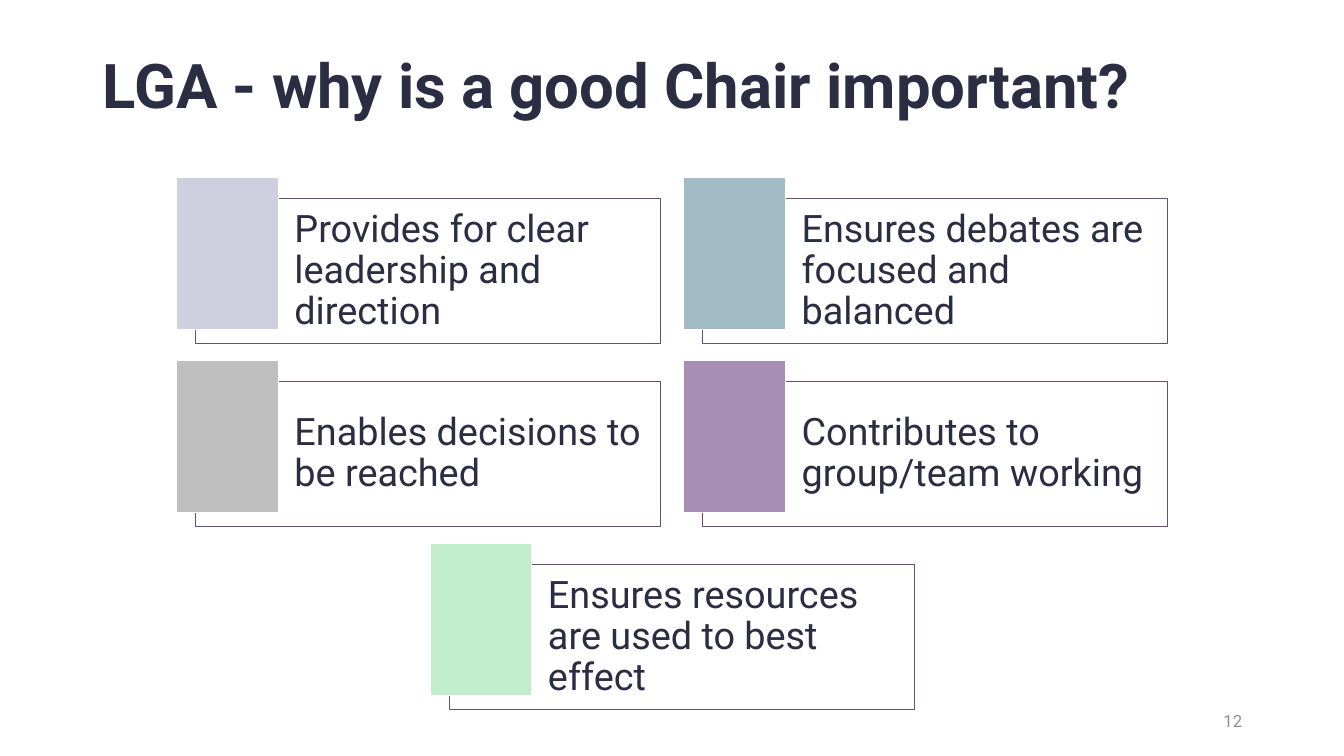
from pptx import Presentation
from pptx.dml.color import RGBColor as RGB
from pptx.enum.shapes import MSO_SHAPE as SHAPE
from pptx.enum.text import MSO_ANCHOR as ANCHOR, PP_ALIGN as ALIGN
from pptx.oxml.ns import qn
from pptx.util import Inches, Pt
from lxml import etree

# Content
TITLE = "LGA - why is a good Chair important?"
PAGE = "12"
REASONS = [
    ("Provides for clear leadership and direction", "CED0DF"),
    ("Ensures debates are focused and balanced", "A2BCC6"),
    ("Enables decisions to be reached", "BFBFBF"),
    ("Contributes to group/team working", "A88DB4"),
    ("Ensures resources are used to best effect", "C1EDCC"),
]

THEME = {
    "font": "Roboto", "ink": "2B2D42", "muted": "8F8F93",
    "paper": "FFFFFF", "frame": "694D75",
    "title": 44, "body": 27, "page": 12,
}

# Layout, in inches
COLUMNS = 2
LEFT, TOP = 1.94, 1.97
CARD_W, CARD_H = 4.61, 1.44
PITCH_X, PITCH_Y = 5.03, 1.815
TAB_W, TAB_H = 1.01, 1.51
TAB_DX, TAB_DY = -0.19, -0.21

prs = Presentation()
prs.slide_width, prs.slide_height = Inches(13.33), Inches(7.5)
s = prs.slides.add_slide(prs.slide_layouts[6])


def write(sp, text, size, color=THEME["ink"], bold=False, align=ALIGN.LEFT,
          spacing=1.0, insets=(0.1, 0.05, 0.1, 0.05)):
    tf = sp.text_frame
    tf.word_wrap = True
    tf.vertical_anchor = ANCHOR.MIDDLE
    (tf.margin_left, tf.margin_top,
     tf.margin_right, tf.margin_bottom) = map(Inches, insets)
    p = tf.paragraphs[0]
    p.alignment, p.line_spacing = align, spacing
    r = p.add_run()
    r.text = text
    r.font.name, r.font.size, r.font.bold = THEME["font"], Pt(size), bold
    r.font.color.rgb = RGB.from_string(color)


def add_rect(x, y, w, h, fill, line, line_width):
    sp = s.shapes.add_shape(SHAPE.RECTANGLE, *map(Inches, (x, y, w, h)))
    sp.shadow.inherit = False
    sp.fill.solid()
    sp.fill.fore_color.rgb = RGB.from_string(fill)
    sp.line.color.rgb = RGB.from_string(line)
    sp.line.width = Pt(line_width)
    return sp


def add_text(x, y, w, h, text, size, **style):
    sp = s.shapes.add_textbox(*map(Inches, (x, y, w, h)))
    write(sp, text, size, **style)


def set_opacity(sp, percent):
    color = sp.fill._xPr.find(qn("a:solidFill"))[0]
    etree.SubElement(color, qn("a:alpha")).set("val", str(percent * 1000))


# Title
add_text(0.92, 0.15, 11.5, 1.45, TITLE, THEME["title"], bold=True, spacing=0.9)

# Reason cards, with a short last row centred
for i, (reason, tab_color) in enumerate(REASONS):
    row, col = divmod(i, COLUMNS)
    in_row = min(COLUMNS, len(REASONS) - row * COLUMNS)
    x = LEFT + (col + (COLUMNS - in_row) / 2) * PITCH_X
    y = TOP + row * PITCH_Y
    card = add_rect(x, y, CARD_W, CARD_H, THEME["paper"], THEME["frame"], 0.5)
    set_opacity(card, 40)
    write(card, reason, THEME["body"], spacing=0.9,
          insets=(0.98, 0.11, 0.11, 0.11))
    add_rect(x + TAB_DX, y + TAB_DY, TAB_W, TAB_H, tab_color, THEME["paper"], 1)

# Page number
add_text(9.42, 6.95, 3, 0.4, PAGE, THEME["page"], color=THEME["muted"],
         align=ALIGN.RIGHT)

prs.save("out.pptx")
